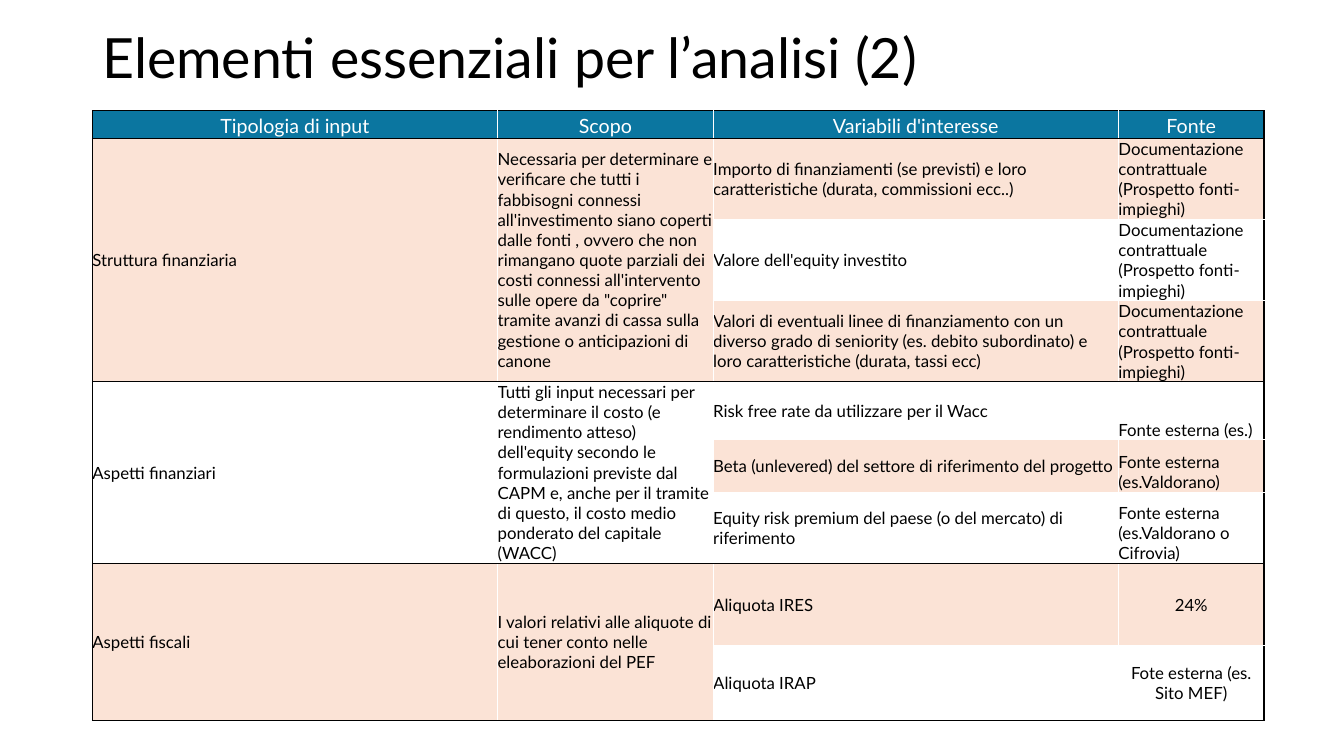
from lxml.etree import SubElement
from pptx import Presentation
from pptx.dml.color import RGBColor
from pptx.enum.text import MSO_ANCHOR as Anchor, PP_ALIGN as Align
from pptx.oxml import parse_xml
from pptx.oxml.ns import nsdecls, qn
from pptx.util import Pt

COLORS = {"header": "0B76A0", "band": "FBE3D6", "ink": "000000", "paper": "FFFFFF"}
FONT = "Lato"
HEADINGS = ["Tipologia di input", "Scopo", "Variabili d'interesse", "Fonte"]
COLUMN_WIDTHS = [289.5, 154, 289.5, 104]
ROW_HEIGHTS = [19.5, 58, 58, 58, 41.5, 37.5, 50.5, 59, 53.5]
CONTRACT = "Documentazione contrattuale (Prospetto fonti- impieghi)"
INPUT_GROUPS = [
    ("Struttura finanziaria",
     "Necessaria per determinare e verificare che tutti i fabbisogni connessi "
     "all'investimento siano coperti dalle fonti , ovvero che non rimangano quote "
     "parziali dei costi connessi all'intervento sulle opere da \"coprire\" tramite "
     "avanzi di cassa sulla gestione o anticipazioni di canone",
     [("Importo di finanziamenti (se previsti) e loro caratteristiche "
       "(durata, commissioni ecc..)", CONTRACT),
      ("Valore dell'equity investito", CONTRACT),
      ("Valori di eventuali linee di finanziamento con un diverso grado di seniority "
       "(es. debito subordinato) e loro caratteristiche (durata, tassi ecc)", CONTRACT)],
     Anchor.BOTTOM, Align.LEFT),
    ("Aspetti finanziari",
     "Tutti gli input necessari per determinare il costo (e rendimento atteso) "
     "dell'equity secondo le formulazioni previste dal CAPM e, anche per il tramite "
     "di questo, il costo medio ponderato del capitale (WACC)",
     [("Risk free rate da utilizzare per il Wacc", "Fonte esterna (es.)"),
      ("Beta (unlevered) del settore di riferimento del progetto",
       "Fonte esterna (es.Valdorano)"),
      ("Equity risk premium del paese (o del mercato) di riferimento",
       "Fonte esterna (es.Valdorano o Cifrovia)")],
     Anchor.BOTTOM, Align.LEFT),
    ("Aspetti fiscali",
     "I valori relativi alle aliquote di cui tener conto nelle eleaborazioni del PEF",
     [("Aliquota IRES", "24%"),
      ("Aliquota IRAP", "Fote esterna (es. Sito MEF)")],
     Anchor.MIDDLE, Align.CENTER),
]


def rgb(name):
    """Return the named palette colour."""
    return RGBColor.from_string(COLORS[name])


def write_cell(cell, text, size=12, color="ink", anchor=Anchor.MIDDLE, align=Align.LEFT):
    """Write one table entry."""
    cell.text = text
    cell.vertical_anchor = anchor
    entry = cell.text_frame.paragraphs[0]
    entry.alignment = align
    entry.font.name, entry.font.size, entry.font.bold = FONT, Pt(size), False
    entry.font.color.rgb = rgb(color)


def paint_cell(cell, fill, edges):
    """Fill a cell and draw its left, right, top and bottom edges."""
    cell.margin_left = cell.margin_right = cell.margin_top = cell.margin_bottom = 0
    if fill:
        cell.fill.solid()
        cell.fill.fore_color.rgb = rgb(fill)
    else:
        cell.fill.background()
    properties = cell._tc.get_or_add_tcPr()
    for position, (side, color) in enumerate(zip("LRTB", edges)):
        edge = parse_xml(f'<a:ln{side} {nsdecls("a")} w="{Pt(1)}"/>')
        solid = SubElement(edge, qn("a:solidFill"))
        SubElement(solid, qn("a:srgbClr"), val=COLORS[color])
        properties.insert(position, edge)


def add_title(slide, left, top, width, height):
    """Place the slide heading."""
    frame = slide.shapes.add_textbox(Pt(left), Pt(top), Pt(width), Pt(height)).text_frame
    frame.word_wrap = True
    frame.vertical_anchor = Anchor.MIDDLE
    heading = frame.paragraphs[0]
    heading.text = "Elementi essenziali per l’analisi (2)"
    heading.line_spacing = 0.9
    heading.font.name, heading.font.size = FONT, Pt(39.6)
    heading.font.color.rgb = rgb("ink")


def add_input_table(slide, left, top):
    """Place the table of inputs, with black rules around each group."""
    rows, columns = len(ROW_HEIGHTS), len(COLUMN_WIDTHS)
    table = slide.shapes.add_table(rows, columns, Pt(left), Pt(top),
                                   Pt(sum(COLUMN_WIDTHS)), Pt(sum(ROW_HEIGHTS))).table
    table.first_row = table.horz_banding = False
    for column, width in zip(table.columns, COLUMN_WIDTHS):
        column.width = Pt(width)
    for row, height in zip(table.rows, ROW_HEIGHTS):
        row.height = Pt(height)

    for column, heading in enumerate(HEADINGS):
        write_cell(table.cell(0, column), heading, 14, "paper", Anchor.BOTTOM, Align.CENTER)

    group_starts = {0, rows}
    first = 1
    for kind, purpose, variables, anchor, align in INPUT_GROUPS:
        group_starts.add(first)
        last = first + len(variables) - 1
        for column, text in enumerate((kind, purpose)):
            table.cell(first, column).merge(table.cell(last, column))
            write_cell(table.cell(first, column), text)
        for row, (variable, origin) in enumerate(variables, first):
            write_cell(table.cell(row, 2), variable)
            write_cell(table.cell(row, 3), origin, anchor=anchor, align=align)
        first = last + 1

    for row in range(rows):
        for column in range(columns):
            cell = table.cell(row, column)
            fill = "header" if row == 0 else "band" if row % 2 else None
            below = row + (cell.span_height if cell.is_merge_origin else 1)
            edges = ["ink" if outer else "paper" for outer in (
                column == 0, column == columns - 1,
                row in group_starts, below in group_starts)]
            paint_cell(cell, fill, edges)


def main():
    """Build and save the slide."""
    deck = Presentation()
    deck.slide_width, deck.slide_height = Pt(960), Pt(540)
    slide = deck.slides.add_slide(deck.slide_layouts[6])
    add_title(slide, 66, 25, 828, 37)
    add_input_table(slide, 66, 79.2)
    deck.save("out.pptx")


if __name__ == "__main__":
    main()
